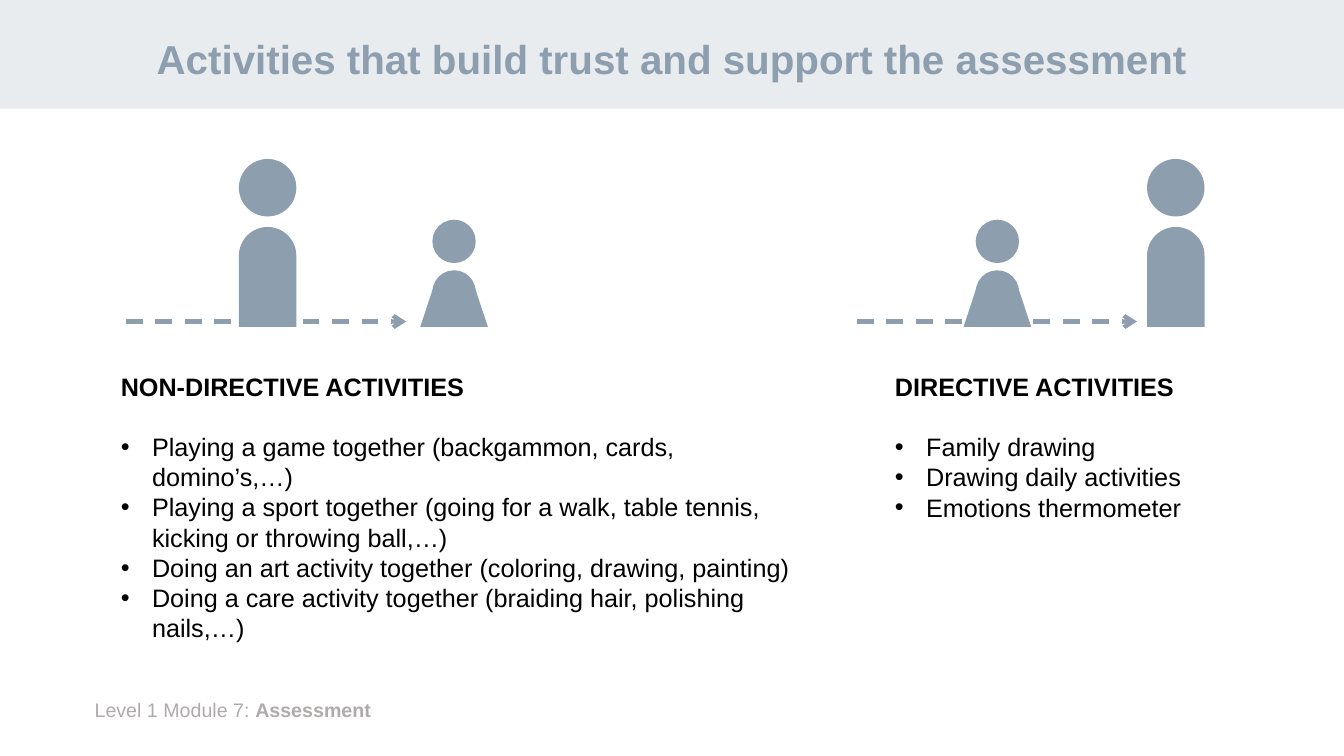
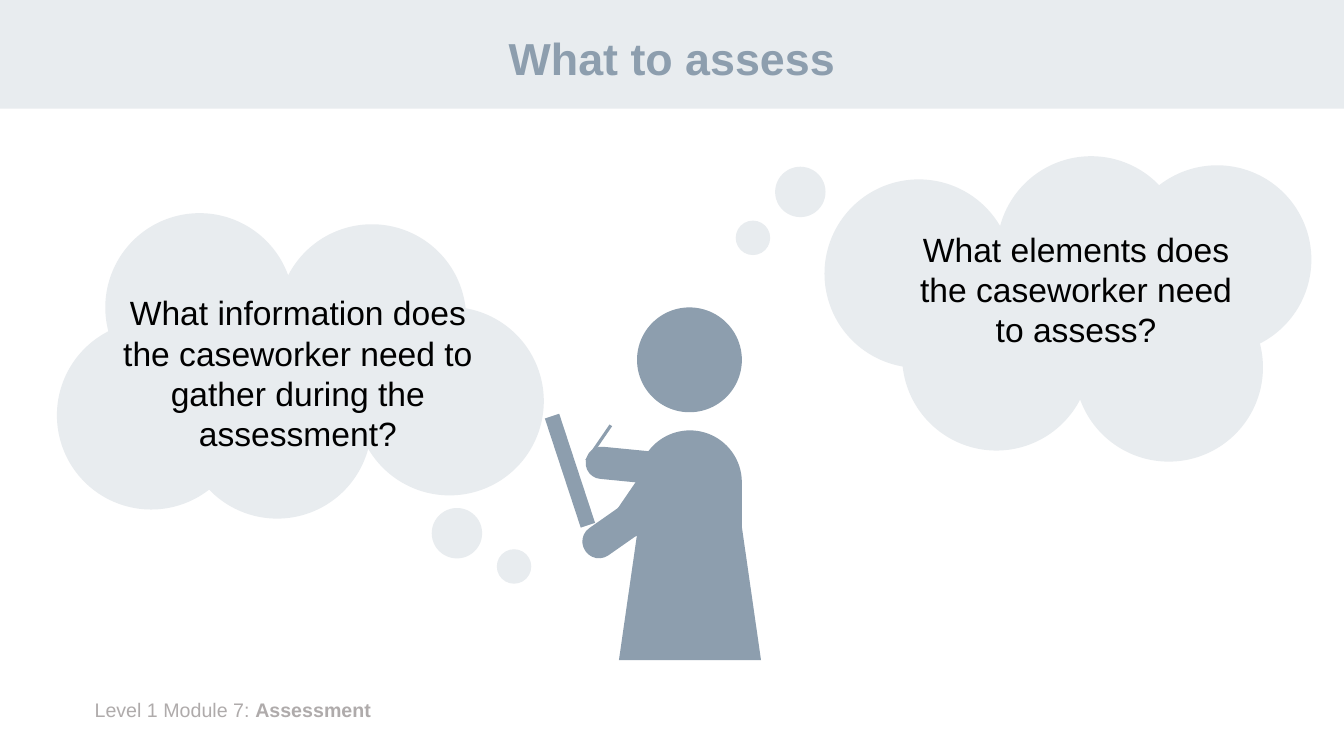
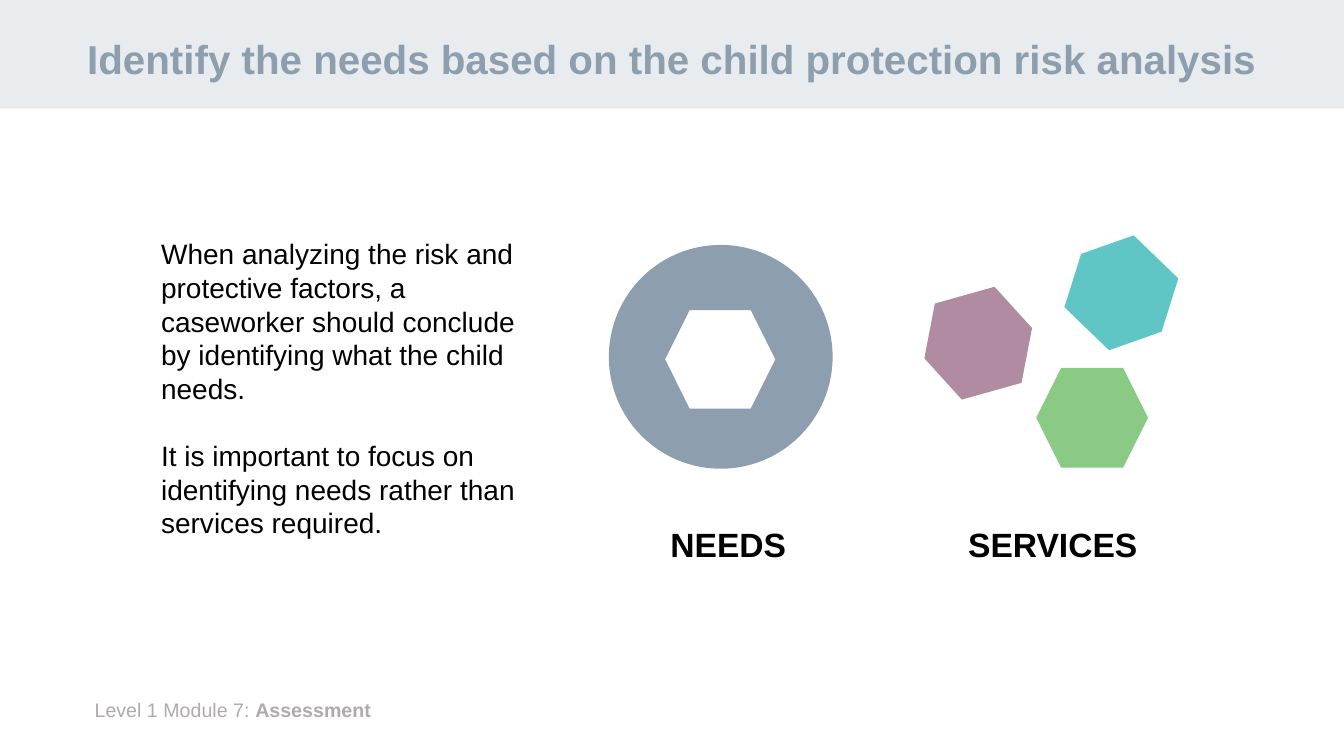
from dataclasses import dataclass, replace
from typing import Optional

import lxml.etree
import pptx
import pptx.dml.color
import pptx.enum.dml
import pptx.enum.shapes
import pptx.enum.text
import pptx.oxml.ns
import pptx.slide
import pptx.util

RGB = pptx.dml.color.RGBColor
SHAPE = pptx.enum.shapes.MSO_SHAPE
ALIGN = pptx.enum.text.PP_ALIGN
ANCHOR = pptx.enum.text.MSO_ANCHOR
qn = pptx.oxml.ns.qn

SLATE = RGB(0x8D, 0x9E, 0xAE)
MIST = RGB(0xE8, 0xEC, 0xEF)
FOOTER_GRAY = RGB(0xAF, 0xAB, 0xAB)
BLACK = RGB(0x00, 0x00, 0x00)
WHITE = RGB(0xFF, 0xFF, 0xFF)
MAUVE = RGB(0xB0, 0x8B, 0xA1)
GREEN = RGB(0x8A, 0xCA, 0x84)
TEAL = RGB(0x5F, 0xC6, 0xC5)

FONT = "Arial"
COLUMNS, ROWS = 160, 90
SLIDE_WIDTH = pptx.util.Emu(12192000)
CELL = SLIDE_WIDTH // COLUMNS
LINE_HEIGHT = 1.2
BULLET_INDENT = pptx.util.Inches(0.31)
GROUND = 38.9
PUFF = 22.44
HEXAGON = (13.32, 11.88)


@dataclass(frozen=True)
class Box:
    left: float
    top: float
    width: float
    height: float


@dataclass(frozen=True)
class Part:
    kind: SHAPE
    box: Box
    color: RGB = SLATE
    rotation: float = 0
    adjustments: tuple[float, ...] = ()
    outline: Optional[RGB] = None


@dataclass(frozen=True)
class Line:
    text: str
    size: float
    bold: bool = False
    color: RGB = BLACK
    align: ALIGN = ALIGN.LEFT
    bullet: bool = False
    gap_before: float = 0
    spacing: Optional[float] = None


@dataclass(frozen=True)
class Cloud:
    x: float
    y: float
    direction: int
    question: str
    text_box: Box
    trail: tuple[tuple[float, float, float], ...]


@dataclass(frozen=True)
class Activities:
    heading: str
    items: tuple[str, ...]
    text_box: Box
    adult_x: float
    child_x: float
    arrow_start: float


def cells(count: float) -> pptx.util.Emu:
    return pptx.util.Emu(round(count * CELL))


def place(box: Box) -> tuple[pptx.util.Emu, ...]:
    return cells(box.left), cells(box.top), cells(box.width), cells(box.height)


def circle(x: float, y: float, diameter: float, color: RGB = SLATE) -> Part:
    return Part(SHAPE.OVAL, Box(x - diameter / 2, y - diameter / 2, diameter, diameter), color)


def draw(slide: pptx.slide.Slide, *parts: Part) -> None:
    for part in parts:
        shape = slide.shapes.add_shape(part.kind, *place(part.box))
        shape.shadow.inherit = False
        shape.rotation = part.rotation
        shape.fill.solid()
        shape.fill.fore_color.rgb = part.color
        if part.outline is None:
            shape.line.fill.background()
        else:
            shape.line.color.rgb = part.outline
            shape.line.width = pptx.util.Pt(1)
        for index, value in enumerate(part.adjustments):
            shape.adjustments[index] = value


def draw_line(slide: pptx.slide.Slide, start: tuple[float, float], end: tuple[float, float],
              width: float, dashed_arrow: bool = False) -> None:
    line = slide.shapes.add_connector(
        pptx.enum.shapes.MSO_CONNECTOR.STRAIGHT, *map(cells, start + end))
    line.line.color.rgb = SLATE
    line.line.width = pptx.util.Pt(width)
    if dashed_arrow:
        line.line.dash_style = pptx.enum.dml.MSO_LINE.DASH
        lxml.etree.SubElement(line.line._get_or_add_ln(), qn("a:tailEnd"), type="arrow")
    lxml.etree.SubElement(line._element.spPr, qn("a:effectLst"))


def write(slide: pptx.slide.Slide, box: Box, *lines: Line, anchor: ANCHOR = ANCHOR.TOP) -> None:
    frame = slide.shapes.add_textbox(*place(box)).text_frame
    frame.word_wrap = True
    frame.vertical_anchor = anchor
    for index, line in enumerate(lines):
        paragraph = frame.add_paragraph() if index else frame.paragraphs[0]
        paragraph.text = line.text
        paragraph.alignment = line.align
        paragraph.line_spacing = line.spacing
        paragraph.space_before = pptx.util.Pt(line.gap_before)
        font = paragraph.font
        font.name, font.size, font.bold = FONT, pptx.util.Pt(line.size), line.bold
        font.color.rgb = line.color
        if line.bullet:
            properties = paragraph._p.get_or_add_pPr()
            properties.set("marL", str(BULLET_INDENT))
            properties.set("indent", str(-BULLET_INDENT))
            lxml.etree.SubElement(properties, qn("a:buFont"), typeface=FONT)
            lxml.etree.SubElement(properties, qn("a:buChar"), char="•")


def write_footer(slide: pptx.slide.Slide) -> None:
    frame = slide.shapes.add_textbox(*place(Box(10.08, 82.44, 136.2, 4.08))).text_frame
    frame.word_wrap = True
    paragraph = frame.paragraphs[0]
    paragraph.font.name, paragraph.font.size = FONT, pptx.util.Pt(14)
    paragraph.font.color.rgb = FOOTER_GRAY
    paragraph.add_run().text = "Level 1 Module 7: "
    module = paragraph.add_run()
    module.text = "Assessment"
    module.font.bold = True


def start_slide(deck, title: str, size: float = 28.8, width: float = 138) -> pptx.slide.Slide:
    slide = deck.slides.add_slide(deck.slide_layouts[6])
    draw(slide, Part(SHAPE.RECTANGLE, Box(0, 0, COLUMNS, 12.95), MIST))
    write_footer(slide)
    write(slide, Box((COLUMNS - width) / 2, 1.56, width, 11.4),
          Line(title, size, True, SLATE, ALIGN.CENTER, spacing=0.9), anchor=ANCHOR.MIDDLE)
    return slide


def body(x: float, width: float, height: float) -> Part:
    return Part(SHAPE.ROUND_2_SAME_RECTANGLE,
                Box(x - width / 2, GROUND - height, width, height), adjustments=(0.5, 0))


def draw_adult(slide: pptx.slide.Slide, x: float) -> None:
    draw(slide, circle(x, 22.35, 6.84), body(x, 6.84, 11.88))


def draw_child(slide: pptx.slide.Slide, x: float) -> None:
    skirt = Part(SHAPE.TRAPEZOID, Box(x - 4.02, GROUND - 4.68, 8.04, 4.68), adjustments=(0.33,))
    draw(slide, body(x, 5.16, 6.72), circle(x, 28.74, 5.16), skirt)


def build_activities(deck) -> None:
    slide = start_slide(deck, "Activities that build trust and support the assessment")
    groups = (
        Activities(
            "NON-DIRECTIVE ACTIVITIES",
            ("Playing a game together (backgammon, cards, domino’s,…)",
             "Playing a sport together (going for a walk, table tennis, kicking or throwing ball,…)",
             "Doing an art activity together (coloring, drawing, painting)",
             "Doing a care activity together (braiding hair, polishing nails,…)"),
            Box(13.2, 43.56, 84.96, 33.96), 31.86, 54.06, 15),
        Activities(
            "DIRECTIVE ACTIVITIES",
            ("Family drawing", "Drawing daily activities", "Emotions thermometer"),
            Box(105.36, 43.56, 42.12, 19.44), 139.98, 118.74, 102),
    )
    size = 18
    for group in groups:
        first, *others = (Line(item, size, bullet=True) for item in group.items)
        write(slide, group.text_box, Line(group.heading, size, True),
              replace(first, gap_before=size * LINE_HEIGHT), *others)
        draw_child(slide, group.child_x)
        draw_adult(slide, group.adult_x)
        draw_line(slide, (group.arrow_start, 38.28), (group.arrow_start + 33.36, 38.28), 3, True)


def draw_cloud(slide: pptx.slide.Slide, cloud: Cloud) -> None:
    puffs = ((-17.76, -4.2), (12, 6.96), (2.76, -6.96), (17.76, -5.88), (-8.52, 5.64))
    for dx, dy in puffs:
        draw(slide, circle(cloud.x + cloud.direction * dx, cloud.y + cloud.direction * dy,
                           PUFF, MIST))
    for x, y, diameter in cloud.trail:
        draw(slide, circle(x, y, diameter, MIST))
    write(slide, cloud.text_box, Line(cloud.question, 24, align=ALIGN.CENTER))


def draw_caseworker(slide: pptx.slide.Slide) -> None:
    limbs = (
        (Box(74.52, 54.96, 3.96, 9.48), 214.3),
        (Box(70.32, 60.6, 3.96, 6.36), 235),
        (Box(73.2, 50.04, 3.84, 10.8), 275.6),
    )
    for box, rotation in limbs:
        draw(slide, Part(SHAPE.ROUND_2_SAME_RECTANGLE, box, rotation=rotation,
                         adjustments=(0.49, 0)))
    draw(slide, Part(SHAPE.RECTANGLE, Box(66.96, 49.2, 1.8, 13.68), rotation=341.8))
    draw_line(slide, (72.72, 50.64), (69.84, 54.84), 2.25)
    draw(slide,
         Part(SHAPE.FLOWCHART_MANUAL_OPERATION, Box(73.68, 55.08, 16.92, 23.52), rotation=180),
         Part(SHAPE.ROUND_2_SAME_RECTANGLE, Box(75.96, 51.24, 12.36, 27.12),
              adjustments=(0.5, 0)),
         circle(82.08, 42.84, 12.48))


def build_questions(deck) -> None:
    slide = start_slide(deck, "What to assess", 32)
    clouds = (
        Cloud(35.76, 43.56, -1,
              "What information does the caseworker need to gather during the assessment?",
              Box(11.52, 34.2, 47.88, 20.64), ((54.4, 63.48, 6), (61.2, 67.44, 4.1))),
        Cloud(127.14, 36.78, 1, "What elements does the caseworker need to assess?",
              Box(107.4, 26.64, 41.4, 15.72), ((95.28, 22.85, 6), (89.64, 28.32, 4.1))),
    )
    for cloud in clouds:
        draw_cloud(slide, cloud)
    draw_caseworker(slide)


def build_needs(deck) -> None:
    slide = start_slide(
        deck, "Identify the needs based on the child protection risk analysis", width=144)
    size = 20
    write(slide, Box(18, 27.6, 46.8, 37.56),
          Line("When analyzing the risk and protective factors, a caseworker should conclude "
               "by identifying what the child needs.", size),
          Line("It is important to focus on identifying needs rather than services required.",
               size, gap_before=size * LINE_HEIGHT))
    for label, left, width in (("NEEDS", 76.56, 20.28), ("SERVICES", 105.72, 39.24)):
        write(slide, Box(left, 61.8, width, 6), Line(label, 24, True, align=ALIGN.CENTER))
    draw(slide, circle(85.8, 42.48, 26.64),
         Part(SHAPE.HEXAGON, Box(79.08, 36.84, *HEXAGON), WHITE, outline=SLATE))
    services = (
        (109.8, 34.92, MAUVE, 344.3),
        (123.36, 43.8, GREEN, 0),
        (126.84, 28.92, TEAL, 44),
    )
    for left, top, color, rotation in services:
        draw(slide, Part(SHAPE.HEXAGON, Box(left, top, *HEXAGON), color, rotation))


def main() -> None:
    deck = pptx.Presentation()
    deck.slide_width = SLIDE_WIDTH
    deck.slide_height = cells(ROWS)
    build_activities(deck)
    build_questions(deck)
    build_needs(deck)
    deck.save("out.pptx")


if __name__ == "__main__":
    main()
